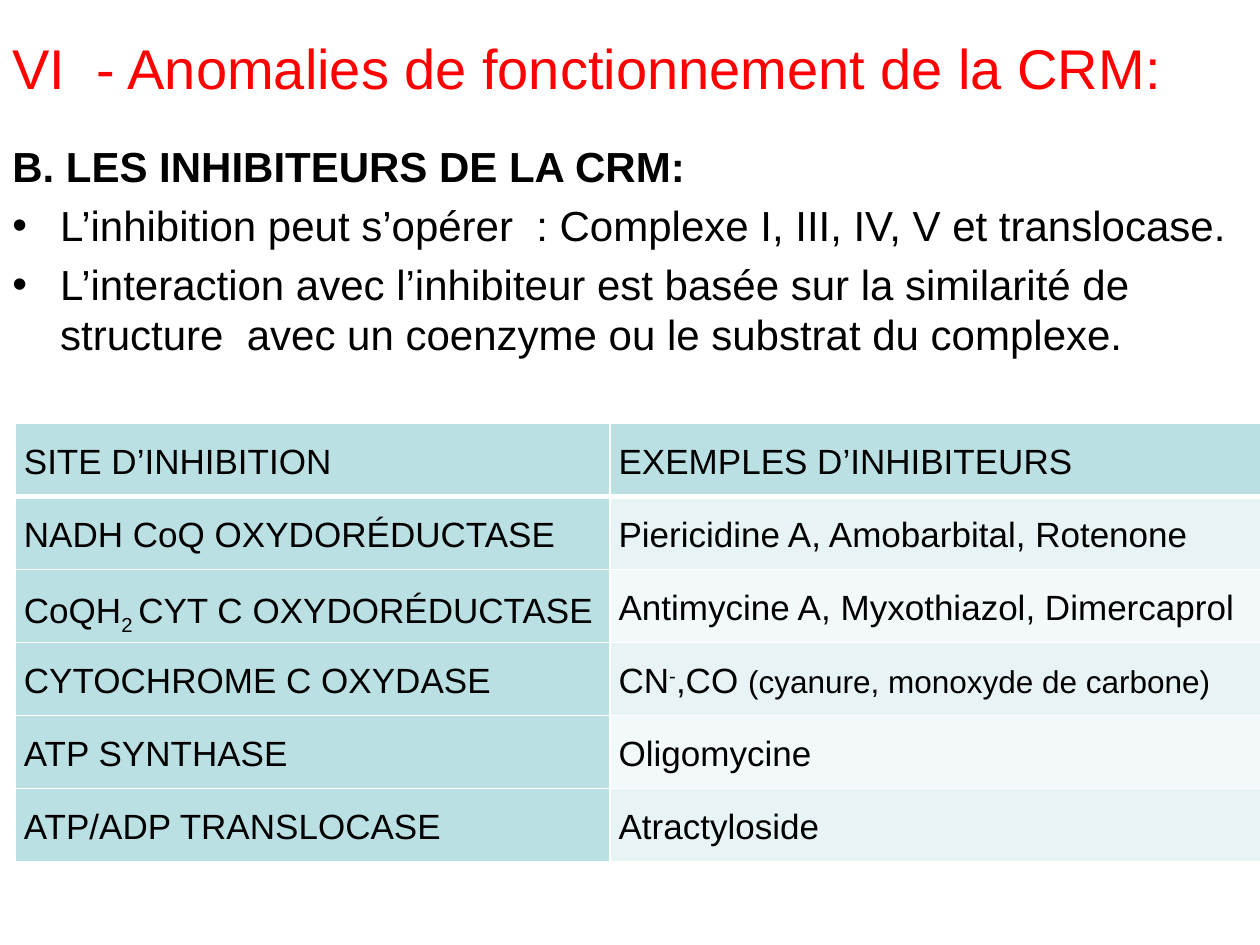
import pptx
import pptx.dml.color
import pptx.enum.text
import pptx.oxml
import pptx.oxml.ns
import pptx.util
from dataclasses import dataclass
from pptx.util import Inches


@dataclass(frozen=True)
class Theme:
    font: str = "Arial"
    title_color: str = "FF0000"
    text_color: str = "000000"
    border_color: str = "FFFFFF"
    accent_fill: str = "BBE0E3"
    band_fills: tuple = ("E7F3F4", "F3F9FA")
    title_size: int = 32
    body_size: int = 24
    table_size: int = 20
    note_size: int = 18


THEME = Theme()
LEFT = pptx.enum.text.PP_ALIGN.LEFT
JUSTIFY = pptx.enum.text.PP_ALIGN.JUSTIFY

BULLETS = [
    "L’inhibition peut s’opérer  : Complexe I, III, IV, V et translocase.",
    "L’interaction avec l’inhibiteur est basée sur la similarité de structure  "
    "avec un coenzyme ou le substrat du complexe.",
]

# Each cell is a list of (text, format) runs
INHIBITORS = [
    ([("SITE D’INHIBITION", {})], [("EXEMPLES D’INHIBITEURS", {})]),
    ([("NADH CoQ OXYDORÉDUCTASE", {})],
     [("Piericidine A, Amobarbital, Rotenone", {})]),
    ([("CoQH", {}), ("2 ", {"baseline": -25}), ("CYT C OXYDORÉDUCTASE", {})],
     [("Antimycine A, Myxothiazol, Dimercaprol", {})]),
    ([("CYTOCHROME C OXYDASE", {})],
     [("CN", {}), ("-", {"baseline": 30}), (",CO ", {}),
      ("(cyanure, monoxyde de carbone)", {"size": THEME.note_size})]),
    ([("ATP SYNTHASE", {})], [("Oligomycine", {})]),
    ([("ATP/ADP TRANSLOCASE", {})], [("Atractyloside", {})]),
]


def rgb(color):
    return pptx.dml.color.RGBColor.from_string(color)


def add_text(paragraph, text, *, size, color=THEME.text_color, bold=False, baseline=0):
    run = paragraph.add_run()
    run.text = text
    run.font.name = THEME.font
    run.font.size = pptx.util.Pt(size)
    run.font.bold = bold
    run.font.color.rgb = rgb(color)
    if baseline:
        run.font._element.set("baseline", str(baseline * 1000))


def add_bullet(paragraph):
    properties = paragraph._p.get_or_add_pPr()
    indent = Inches(0.38)
    properties.set("marL", str(indent))
    properties.set("indent", str(-indent))
    namespace = pptx.oxml.ns.nsdecls("a")
    for xml in (f'<a:buFont {namespace} typeface="{THEME.font}"/>',
                f'<a:buChar {namespace} char="•"/>'):
        properties.append(pptx.oxml.parse_xml(xml))


def add_title(slide):
    title = slide.shapes.title
    title.left, title.top, title.width, title.height = (
        Inches(0), Inches(0), Inches(10), Inches(1.07))
    title.text_frame.vertical_anchor = pptx.enum.text.MSO_ANCHOR.MIDDLE
    paragraph = title.text_frame.paragraphs[0]
    paragraph.alignment = LEFT
    add_text(paragraph, "VI  - Anomalies de fonctionnement de la CRM:",
             size=THEME.title_size, color=THEME.title_color)


def add_body(slide):
    box = slide.shapes.add_textbox(Inches(0), Inches(1.07), Inches(10), Inches(2.2))
    frame = box.text_frame
    frame.word_wrap = True
    add_text(frame.paragraphs[0], "B. LES INHIBITEURS DE LA CRM:",
             size=THEME.body_size, bold=True)
    for text in BULLETS:
        paragraph = frame.add_paragraph()
        add_bullet(paragraph)
        paragraph.space_before = pptx.util.Pt(0.2 * THEME.body_size)
        add_text(paragraph, text, size=THEME.body_size)


def set_borders(cell, widths):
    """Draw the left, right, top and bottom borders, with widths in points."""
    properties = cell._tc.get_or_add_tcPr()
    for position, (side, width) in enumerate(zip("LRTB", widths)):
        properties.insert(position, pptx.oxml.parse_xml(
            f'<a:ln{side} {pptx.oxml.ns.nsdecls("a")} w="{pptx.util.Pt(width)}">'
            f'<a:solidFill><a:srgbClr val="{THEME.border_color}"/></a:solidFill>'
            f'</a:ln{side}>'))


def fill_cell(cell, runs, *, fill, alignment, borders):
    cell.margin_left = cell.margin_right = Inches(0.07)
    cell.margin_top = cell.margin_bottom = Inches(0)
    cell.fill.solid()
    cell.fill.fore_color.rgb = rgb(fill)
    set_borders(cell, borders)
    paragraph = cell.text_frame.paragraphs[0]
    paragraph.alignment = alignment
    paragraph.line_spacing = 1.5
    for text, run_format in runs:
        add_text(paragraph, text, **{"size": THEME.table_size, **run_format})


def add_inhibitor_table(slide):
    column_widths = [Inches(4.72), Inches(5.17)]
    row_height = Inches(0.58)
    table = slide.shapes.add_table(
        len(INHIBITORS), len(column_widths), Inches(0.12), Inches(3.36),
        sum(column_widths), row_height * len(INHIBITORS)).table
    for column, width in zip(table.columns, column_widths):
        column.width = width
    for row, (site, examples) in enumerate(INHIBITORS):
        table.rows[row].height = row_height
        # A thick rule separates the header from the rows
        borders = (1, 1, 3 if row == 1 else 1, 3 if row == 0 else 1)
        band = THEME.band_fills[(row - 1) % 2] if row else THEME.accent_fill
        fill_cell(table.cell(row, 0), site, fill=THEME.accent_fill,
                  alignment=LEFT, borders=borders)
        fill_cell(table.cell(row, 1), examples, fill=band,
                  alignment=LEFT if len(examples) > 1 else JUSTIFY, borders=borders)


def main():
    presentation = pptx.Presentation()
    presentation.slide_width = Inches(10)
    presentation.slide_height = Inches(7.5)
    slide = presentation.slides.add_slide(presentation.slide_layouts[5])
    add_title(slide)
    add_body(slide)
    add_inhibitor_table(slide)
    presentation.save("out.pptx")


if __name__ == "__main__":
    main()
